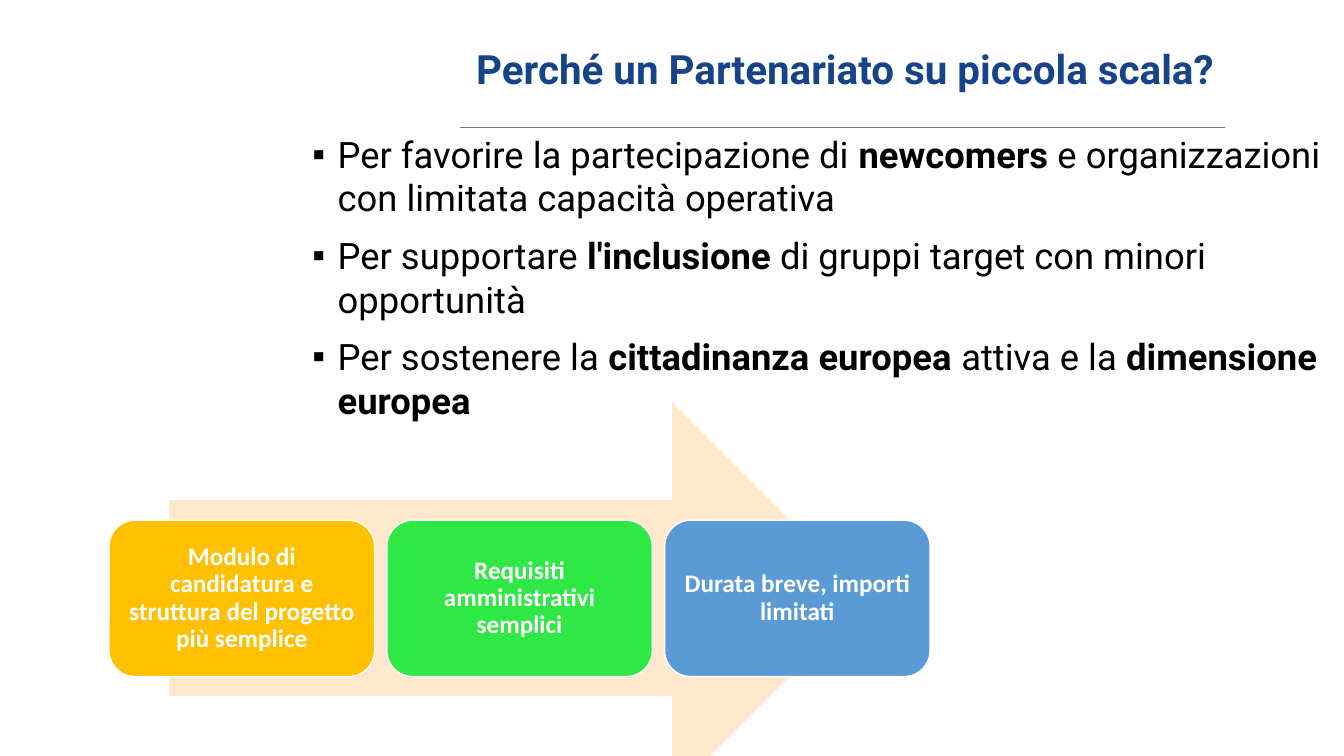
from lxml.etree import SubElement
from pptx import Presentation
from pptx.dml.color import RGBColor
from pptx.enum.shapes import MSO_CONNECTOR, MSO_SHAPE
from pptx.enum.text import MSO_ANCHOR, PP_ALIGN
from pptx.oxml.ns import qn
from pptx.util import Cm, Pt

NAVY = RGBColor(0x17, 0x44, 0x89)
BLACK = RGBColor(0, 0, 0)
WHITE = RGBColor(0xFF, 0xFF, 0xFF)
GREY = RGBColor(0x76, 0x76, 0x76)
PEACH = RGBColor(0xFF, 0xE8, 0xCC)
AMBER = RGBColor(0xFF, 0xC0, 0x00)
GREEN = RGBColor(0x30, 0xE8, 0x45)
BLUE = RGBColor(0x5B, 0x9B, 0xD5)

# Each reason is a list of (text, bold) runs.
REASONS = [
    [("Per favorire la partecipazione di ", False), ("newcomers", True),
     (" e organizzazioni con limitata capacità operativa", False)],
    [("Per supportare ", False), ("l'inclusione", True),
     (" di gruppi target con minori opportunità", False)],
    [("Per sostenere la ", False), ("cittadinanza europea ", True),
     ("attiva e la ", False), ("dimensione europea", True)],
]
CARDS = [
    ("Modulo di candidatura e struttura del progetto più semplice", AMBER),
    ("Requisiti amministrativi semplici", GREEN),
    ("Durata breve, importi limitati", BLUE),
]
CARD_LEFT, CARD_STEP = 2.75, 7


def add_run(para, text, color, **style):
    run = para.add_run()
    run.text = text
    run.font.color.rgb = color
    for name, value in style.items():
        setattr(run.font, name, value)


def add_box(slide, left, top, width, height, anchor):
    box = slide.shapes.add_textbox(Cm(left), Cm(top), Cm(width), Cm(height))
    frame = box.text_frame
    frame.word_wrap = True
    frame.vertical_anchor = anchor
    return frame


def add_title(slide, text):
    frame = add_box(slide, 11.38, 0.5, 19.84, 2.45, MSO_ANCHOR.MIDDLE)
    para = frame.paragraphs[0]
    para.alignment = PP_ALIGN.CENTER
    add_run(para, text, NAVY, name="Roboto", size=Pt(28.8), bold=True)


def add_rule(slide):
    rule = slide.shapes.add_connector(
        MSO_CONNECTOR.STRAIGHT, Cm(11.58), Cm(3.2), Cm(30.86), Cm(3.2))
    rule.line.color.rgb = GREY
    rule.line.width = Pt(0.5)
    SubElement(rule._element.spPr, qn("a:effectLst"))


def add_bullet(para):
    """Give the paragraph a square bullet with a hanging indent."""
    props = para._p.get_or_add_pPr()
    props.set("marL", str(Cm(0.64)))
    props.set("indent", str(-Cm(0.64)))
    SubElement(props, qn("a:buFont")).set("typeface", "Arial")
    SubElement(props, qn("a:buChar")).set("char", "▪")


def add_list(slide, reasons):
    frame = add_box(slide, 7.62, 3.2, 26.24, 8.43, MSO_ANCHOR.TOP)
    for index, runs in enumerate(reasons):
        para = frame.add_paragraph() if index else frame.paragraphs[0]
        add_bullet(para)
        para.space_before = Pt(10 if index else 0)
        for text, bold in runs:
            add_run(para, text, BLACK, name="Roboto", size=Pt(26), bold=bold)


def add_solid(slide, kind, left, top, width, height, fill):
    shape = slide.shapes.add_shape(
        kind, Cm(left), Cm(top), Cm(width), Cm(height))
    shape.shadow.inherit = False
    shape.fill.solid()
    shape.fill.fore_color.rgb = fill
    shape.line.fill.background()
    return shape


def add_card(slide, left, text, fill):
    card = add_solid(slide, MSO_SHAPE.ROUNDED_RECTANGLE,
                     left, 13.11, 6.69, 3.94, fill)
    card.line.color.rgb = WHITE
    card.line.width = Pt(1)
    frame = card.text_frame
    frame.word_wrap = True
    frame.vertical_anchor = MSO_ANCHOR.MIDDLE
    for side in ("left", "top", "right", "bottom"):
        setattr(frame, f"margin_{side}", Cm(0.18))
    para = frame.paragraphs[0]
    para.alignment = PP_ALIGN.CENTER
    para.line_spacing = 0.9
    add_run(para, text, WHITE, name="Calibri", size=Pt(18), bold=True)


def main():
    deck = Presentation()
    deck.slide_width, deck.slide_height = Cm(33.87), Cm(19.05)
    slide = deck.slides.add_slide(deck.slide_layouts[6])
    add_title(slide, "Perché un Partenariato su piccola scala?")
    add_rule(slide)
    add_list(slide, REASONS)
    add_solid(slide, MSO_SHAPE.RIGHT_ARROW, 4.27, 10.14, 17.6, 9.86, PEACH)
    for index, (text, fill) in enumerate(CARDS):
        add_card(slide, CARD_LEFT + index * CARD_STEP, text, fill)
    deck.save("out.pptx")


if __name__ == "__main__":
    main()
